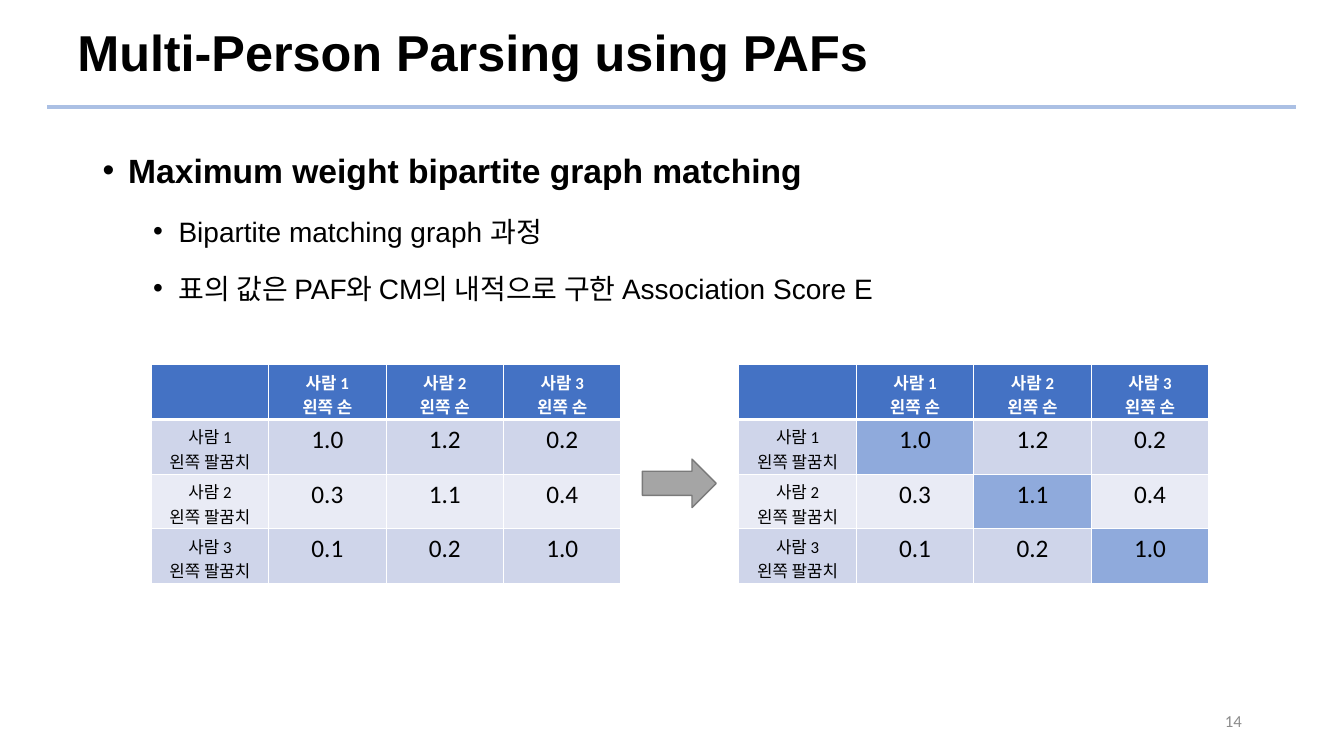
import pptx
import pptx.util
import pptx.dml.color
import pptx.enum.shapes
import pptx.enum.text
import pptx.oxml
import pptx.oxml.ns
from lxml import etree

Cm, Pt = pptx.util.Cm, pptx.util.Pt
ALIGN = pptx.enum.text.PP_ALIGN
ANCHOR = pptx.enum.text.MSO_ANCHOR

COLORS = {
    "text": "000000",
    "white": "FFFFFF",
    "rule": "ABC0E4",
    "page": "8C8C8C",
    "header": "4472C4",
    "odd": "CFD5EA",
    "even": "E9EBF5",
    "match": "8FAADC",
    "arrow": "A5A5A5",
    "arrow_edge": "7A7A7A",
}

BULLETS = [
    # text, left margin, size, bold, space before
    ("Maximum weight bipartite graph matching", Cm(0.64), 24, True, 0),
    ("Bipartite matching graph 과정", Cm(1.91), 20, False, 5),
    ("표의 값은 PAF와 CM의 내적으로 구한 Association Score E", Cm(1.91), 20, False, 5),
]
PEOPLE = ["사람 1", "사람 2", "사람 3"]
SCORES = [
    ["1.0", "1.2", "0.2"],
    ["0.3", "1.1", "0.4"],
    ["0.1", "0.2", "1.0"],
]


def rgb(name):
    return pptx.dml.color.RGBColor.from_string(COLORS[name])


def format_runs(paragraph, size, font="Calibri", color="text", bold=False):
    for run in paragraph.runs:
        run.font.size = Pt(size)
        run.font.name = font
        run.font.bold = bold
        run.font.color.rgb = rgb(color)


def add_text_frame(slide, left, top, width, height, anchor=ANCHOR.MIDDLE):
    frame = slide.shapes.add_textbox(left, top, width, height).text_frame
    frame.word_wrap = True
    frame.vertical_anchor = anchor
    return frame


def add_rule(slide, left, right, y):
    rule = slide.shapes.add_connector(
        pptx.enum.shapes.MSO_CONNECTOR.STRAIGHT, left, y, right, y)
    rule.line.color.rgb = rgb("rule")
    rule.line.width = Pt(3)
    etree.SubElement(rule._element.spPr, pptx.oxml.ns.qn("a:effectLst"))


def add_bullets(frame, bullets):
    frame.text = "\n".join(bullet[0] for bullet in bullets)
    for paragraph, (_, margin, size, bold, before) in zip(frame.paragraphs, bullets):
        properties = paragraph._p.get_or_add_pPr()
        properties.set("marL", str(margin))
        properties.set("indent", str(-Cm(0.64)))
        etree.SubElement(properties, pptx.oxml.ns.qn("a:buFont"), typeface="Arial")
        etree.SubElement(properties, pptx.oxml.ns.qn("a:buChar"), char="•")
        paragraph.line_spacing = 1.5
        paragraph.space_before = Pt(before)
        format_runs(paragraph, size, "Arial", bold=bold)


def add_borders(cell, row):
    widths = {"L": 1, "R": 1, "T": 3 if row == 1 else 1, "B": 3 if row == 0 else 1}
    for side, width in widths.items():
        cell._tc.get_or_add_tcPr().append(pptx.oxml.parse_xml(
            f'<a:ln{side} {pptx.oxml.ns.nsdecls("a")} w="{Pt(width)}"><a:solidFill>'
            f'<a:srgbClr val="{COLORS["white"]}"/></a:solidFill></a:ln{side}>'))


def add_score_table(slide, left, show_matches):
    rows = [[""] + [f"{person}\n왼쪽 손" for person in PEOPLE]]
    rows += [[f"{person}\n왼쪽 팔꿈치"] + scores
             for person, scores in zip(PEOPLE, SCORES)]
    table = slide.shapes.add_table(
        len(rows), len(rows[0]), left, Cm(9.19), Cm(11.84), Cm(5.52)).table
    for r, row in enumerate(rows):
        for c, text in enumerate(row):
            cell = table.cell(r, c)
            add_borders(cell, r)
            if r == 0:
                fill = "header"
            elif show_matches and r == c:
                fill = "match"
            else:
                fill = "odd" if r % 2 else "even"
            cell.fill.solid()
            cell.fill.fore_color.rgb = rgb(fill)
            cell.text_frame.text = text
            for paragraph in cell.text_frame.paragraphs:
                paragraph.alignment = ALIGN.CENTER
                format_runs(paragraph, 18 if r and c else 12,
                            color="text" if r else "white", bold=r == 0)


def add_arrow(slide, left, top, width, height):
    arrow = slide.shapes.add_shape(
        pptx.enum.shapes.MSO_SHAPE.RIGHT_ARROW, left, top, width, height)
    arrow.shadow.inherit = False
    arrow.fill.solid()
    arrow.fill.fore_color.rgb = rgb("arrow")
    arrow.line.color.rgb = rgb("arrow_edge")
    arrow.line.width = Pt(1)


def main():
    deck = pptx.Presentation()
    deck.slide_width, deck.slide_height = Cm(33.87), Cm(19.05)
    slide = deck.slides.add_slide(deck.slide_layouts[6])

    # Heading
    add_rule(slide, Cm(1.19), Cm(32.66), Cm(2.69))
    title = add_text_frame(slide, Cm(1.7), Cm(0.56), Cm(29.21), Cm(1.65))
    title.text = "Multi-Person Parsing using PAFs"
    title.paragraphs[0].line_spacing = 0.9
    format_runs(title.paragraphs[0], 36, "Arial", bold=True)

    # Explanation
    body = add_text_frame(slide, Cm(2.34), Cm(3.15), Cm(29.21), Cm(12.09), ANCHOR.TOP)
    add_bullets(body, BULLETS)

    # Scores before and after matching
    add_score_table(slide, Cm(3.81), show_matches=False)
    add_score_table(slide, Cm(18.62), show_matches=True)
    add_arrow(slide, Cm(16.19), Cm(11.57), Cm(1.86), Cm(1.22))

    # Page number
    page = add_text_frame(slide, Cm(23.93), Cm(17.65), Cm(7.62), Cm(1.02))
    page.text = "14"
    page.paragraphs[0].alignment = ALIGN.RIGHT
    format_runs(page.paragraphs[0], 12, color="page")

    deck.save("out.pptx")


if __name__ == "__main__":
    main()
